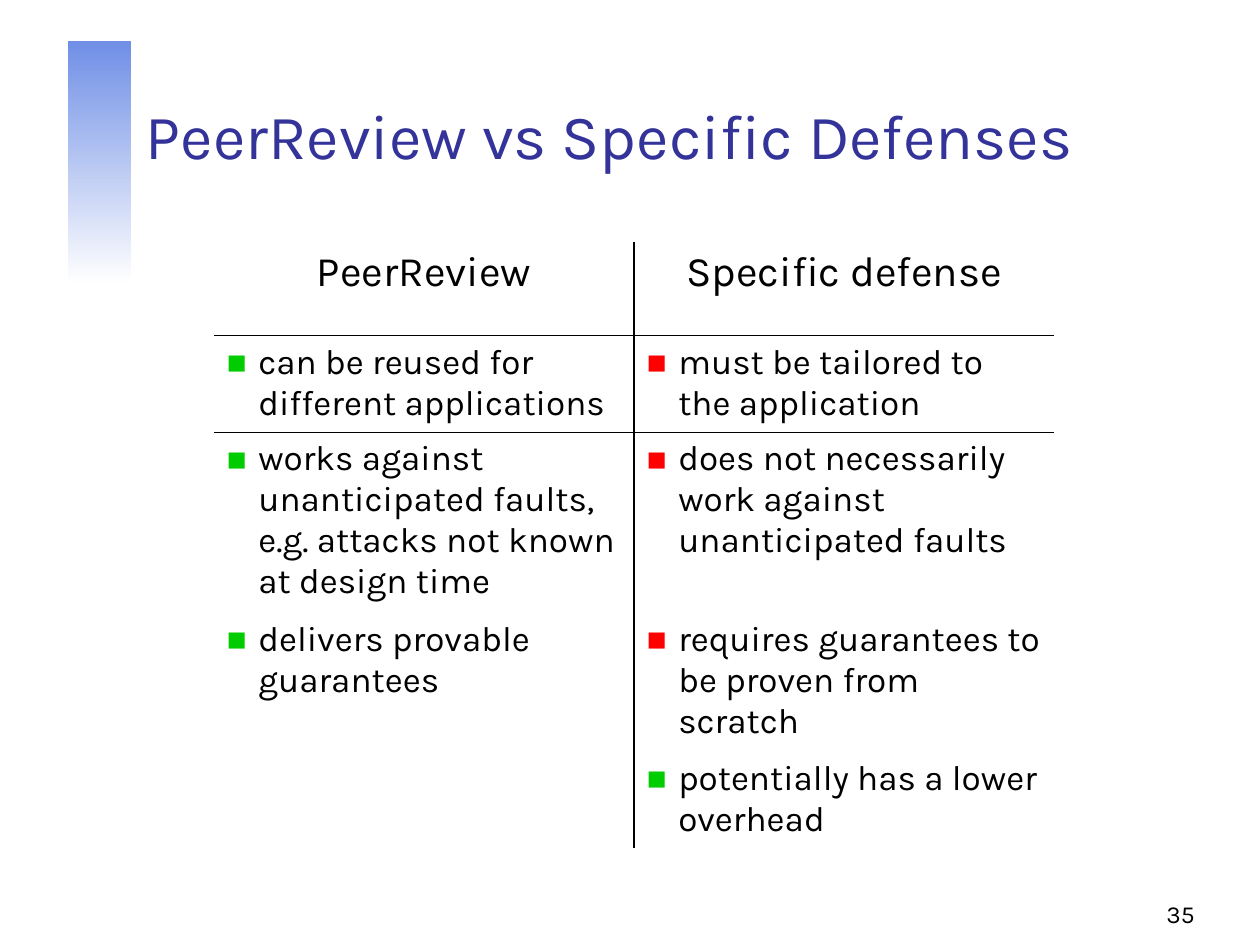
from lxml.etree import SubElement
from pptx import Presentation
from pptx.dml.color import RGBColor
from pptx.enum.shapes import MSO_SHAPE as Shape
from pptx.enum.text import MSO_ANCHOR as Anchor, PP_ALIGN as Align
from pptx.oxml import parse_xml
from pptx.oxml.ns import nsdecls, qn
from pptx.util import Pt

# Content
FONT = "Karla"
BLACK = RGBColor(0x00, 0x00, 0x00)
WHITE = RGBColor(0xFF, 0xFF, 0xFF)
NAVY = RGBColor(0x33, 0x33, 0x99)
BLUE = RGBColor(0x70, 0x8F, 0xE6)
GREEN = RGBColor(0x00, 0xCC, 0x00)
RED = RGBColor(0xFF, 0x00, 0x00)

TITLE = "PeerReview vs Specific Defenses"
PAGE = "35"
HEADERS = ("PeerReview", "Specific defense")
ROWS = [
    (("can be reused for different applications", GREEN),
     ("must be tailored to the application", RED)),
    (("works against unanticipated faults, e.g. attacks not known at design time", GREEN),
     ("does not necessarily work against unanticipated faults", RED)),
    (("delivers provable guarantees", GREEN),
     ("requires guarantees to be proven from scratch", RED)),
    (None, ("potentially has a lower overhead", GREEN)),
]
TABLE_LEFT, TABLE_TOP, COL_W, ROW_H = 122.4, 138.2, 240, 53.6
PLAIN_TABLE = "{2D5ABB26-0587-4C30-8999-92F81FD0307C}"


def style(p, size, color, align):
    p.alignment = align
    for r in p.runs:
        r.font.size, r.font.name = Pt(size), FONT
        r.font.color.rgb = color


def add_text(s, text, box, size, color, align):
    tf = s.shapes.add_textbox(*map(Pt, box)).text_frame
    tf.word_wrap = True
    tf.vertical_anchor = Anchor.BOTTOM
    tf.text = text
    style(tf.paragraphs[0], size, color, align)


def add_bullet(p, color):
    pPr = p._p.get_or_add_pPr()
    pPr.set("marL", str(Pt(18)))
    pPr.set("indent", str(Pt(-18)))
    clr = SubElement(pPr, qn("a:buClr"))
    SubElement(clr, qn("a:srgbClr"), val=str(color))
    SubElement(pPr, qn("a:buSzPct"), val="60000")
    SubElement(pPr, qn("a:buFont"), typeface=FONT)
    SubElement(pPr, qn("a:buChar"), char="■")


def set_borders(cell, sides):
    tcPr = cell._tc.get_or_add_tcPr()
    for i, side in enumerate(sides):
        tcPr.insert(i, parse_xml(
            f'<a:ln{side} {nsdecls("a")} w="{Pt(1)}"><a:solidFill>'
            f'<a:srgbClr val="{BLACK}"/></a:solidFill></a:ln{side}>'))


prs = Presentation()
prs.slide_width, prs.slide_height = Pt(720), Pt(540)
s = prs.slides.add_slide(prs.slide_layouts[6])

# Gradient bar
bar = s.shapes.add_shape(Shape.RECTANGLE, Pt(38.9), Pt(23.4), Pt(36), Pt(139))
bar.shadow.inherit = False
bar.line.fill.background()
bar.fill.gradient()
bar.fill.gradient_angle = 270
for stop, color, pos in zip(bar.fill.gradient_stops, (BLUE, WHITE), (0, 1)):
    stop.color.rgb, stop.position = color, pos

# Page number and title
add_text(s, PAGE, (540, 498.2, 149.8, 36), 14, BLACK, Align.RIGHT)
add_text(s, TITLE, (76.3, 23.8, 613.4, 77.8), 36, NAVY, Align.LEFT)

# Comparison table
n_rows = len(ROWS) + 1
frame = s.shapes.add_table(n_rows, 2, Pt(TABLE_LEFT), Pt(TABLE_TOP),
                           Pt(2 * COL_W), Pt(n_rows * ROW_H))
table = frame.table
table.first_row = table.horz_banding = False
table._tbl.tblPr.find(qn("a:tableStyleId")).text = PLAIN_TABLE

headers = [(text, None) for text in HEADERS]
for row, items in enumerate([headers] + ROWS):
    for col, item in enumerate(items):
        cell = table.cell(row, col)
        cell.fill.background()
        sides = ["R" if col == 0 else "L"]
        if row < 2:
            sides.append("B" if row == 0 else "T")
        set_borders(cell, sides)
        if item is None:
            continue
        text, color = item
        cell.text = text
        p = cell.text_frame.paragraphs[0]
        if color is not None:
            add_bullet(p, color)
        style(p, 24 if row == 0 else 20, BLACK,
              Align.CENTER if row == 0 else Align.LEFT)

prs.save("out.pptx")
